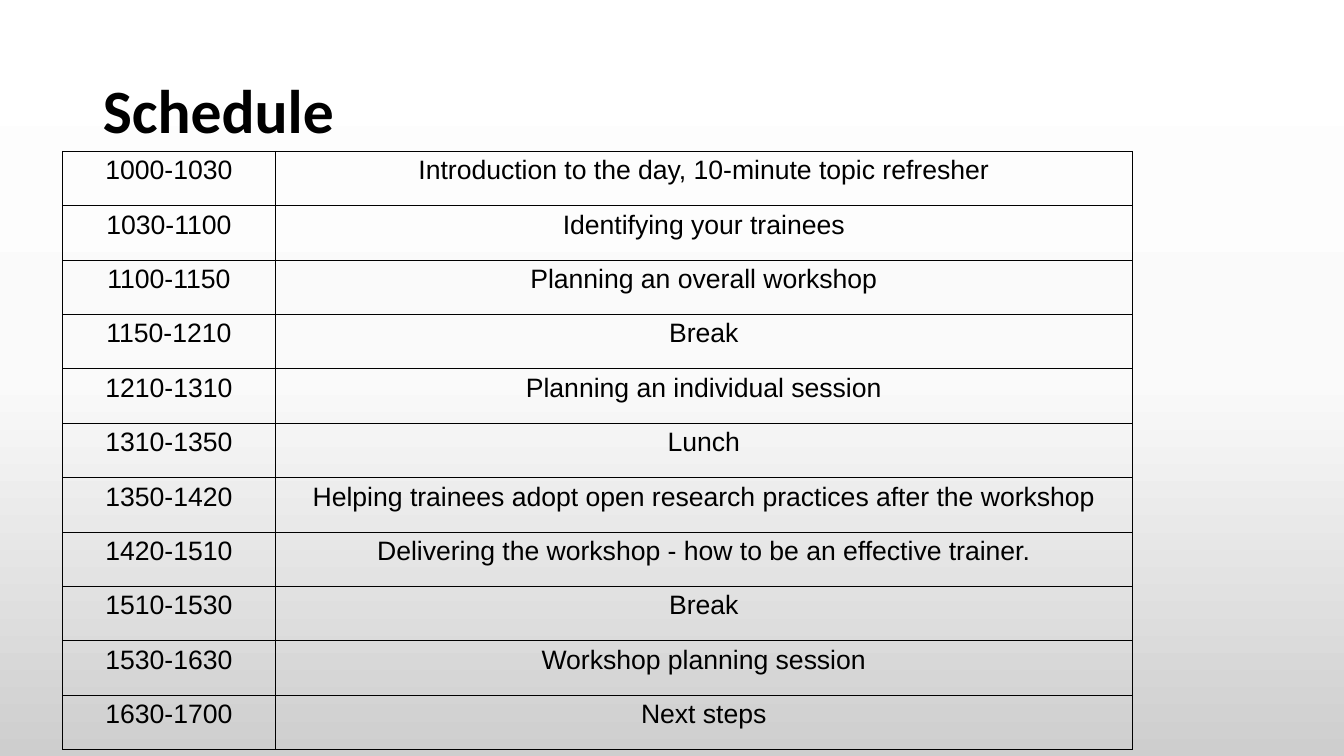
from copy import deepcopy
from dataclasses import dataclass

from lxml.etree import SubElement
from pptx import Presentation
from pptx.dml.color import RGBColor
from pptx.enum.text import MSO_ANCHOR as Anchor, MSO_AUTO_SIZE as AutoSize, PP_ALIGN as Align
from pptx.oxml.ns import qn
from pptx.slide import Slide
from pptx.table import _Cell as Cell
from pptx.text.text import TextFrame
from pptx.util import Inches, Pt

BLACK = "000000"
TITLE_FONT = {"name": "Calibri", "size": Pt(44), "bold": True}
CELL_FONT = {"name": "Arial", "size": Pt(19), "bold": False}
TITLE_FRAME = {
    "vertical_anchor": Anchor.MIDDLE,
    "word_wrap": True,
    "auto_size": AutoSize.NONE,
    "margin_left": Inches(0.1),
    "margin_right": Inches(0.1),
    "margin_top": Inches(0.05),
    "margin_bottom": Inches(0.05),
}
CELL_FORMAT = {
    "vertical_anchor": Anchor.TOP,
    "margin_left": Inches(0.07),
    "margin_right": Inches(0.07),
    "margin_top": 0,
    "margin_bottom": 0,
}
COLUMN_WIDTHS = (2.11, 8.5)
ROW_HEIGHT = 0.54


@dataclass
class Session:
    time: str
    topic: str


@dataclass
class Stop:
    position: float
    color: str


SESSIONS = [
    Session("1000-1030", "Introduction to the day, 10-minute topic refresher"),
    Session("1030-1100", "Identifying your trainees"),
    Session("1100-1150", "Planning an overall workshop"),
    Session("1150-1210", "Break"),
    Session("1210-1310", "Planning an individual session"),
    Session("1310-1350", "Lunch"),
    Session("1350-1420", "Helping trainees adopt open research practices after the workshop"),
    Session("1420-1510", "Delivering the workshop - how to be an effective trainer."),
    Session("1510-1530", "Break"),
    Session("1530-1630", "Workshop planning session"),
    Session("1630-1700", "Next steps"),
]
STOPS = [Stop(0, "FFFFFF"), Stop(0.5, "FAFAFA"), Stop(1, "CECECE")]


def color(value: str) -> RGBColor:
    return RGBColor.from_string(value)


def apply(target: object, values: dict) -> None:
    for name, value in values.items():
        setattr(target, name, value)


def write(frame: TextFrame, text: str, font: dict, align: Align, spacing: float) -> None:
    para = frame.paragraphs[0]
    apply(para, {"alignment": align, "line_spacing": spacing})
    span = para.add_run()
    span.text = text
    apply(span.font, font)
    span.font.color.rgb = color(BLACK)


def paint_background(page: Slide) -> None:
    fill = page.background.fill
    fill.gradient()
    fill.gradient_angle = 270
    stop_list = next(page.element.iter(qn("a:gsLst")))
    stop_list.insert(1, deepcopy(stop_list[0]))
    for gradient_stop, stop in zip(fill.gradient_stops, STOPS):
        gradient_stop.position = stop.position
        gradient_stop.color.rgb = color(stop.color)


def add_borders(cell: Cell) -> None:
    properties = cell._tc.get_or_add_tcPr()
    for side in ("a:lnL", "a:lnR", "a:lnT", "a:lnB"):
        line = SubElement(properties, qn(side), w=str(Pt(0.75)))
        fill = SubElement(line, qn("a:solidFill"))
        SubElement(fill, qn("a:srgbClr"), val=BLACK)


def add_title(page: Slide) -> None:
    title = page.shapes.title
    apply(title, {
        "left": Inches(0.92),
        "top": Inches(0.4),
        "width": Inches(9.71),
        "height": Inches(1.45),
    })
    apply(title.text_frame, TITLE_FRAME)
    write(title.text_frame, "Schedule", TITLE_FONT, Align.LEFT, 0.9)


def add_schedule(page: Slide) -> None:
    table = page.shapes.add_table(
        len(SESSIONS), len(COLUMN_WIDTHS), Inches(0.62), Inches(1.5),
        Inches(sum(COLUMN_WIDTHS)), Inches(ROW_HEIGHT * len(SESSIONS)),
    ).table
    apply(table, {"first_row": False, "horz_banding": False})
    for column, width in zip(table.columns, COLUMN_WIDTHS):
        column.width = Inches(width)
    for row, session in zip(table.rows, SESSIONS):
        row.height = Inches(ROW_HEIGHT)
        for cell, text in zip(row.cells, (session.time, session.topic)):
            apply(cell, CELL_FORMAT)
            add_borders(cell)
            cell.fill.background()
            write(cell.text_frame, text, CELL_FONT, Align.CENTER, 1.15)


def main() -> None:
    deck = Presentation()
    apply(deck, {"slide_width": Inches(13.33), "slide_height": Inches(7.5)})
    page = deck.slides.add_slide(deck.slide_layouts[5])
    paint_background(page)
    add_title(page)
    add_schedule(page)
    deck.save("out.pptx")


if __name__ == "__main__":
    main()
